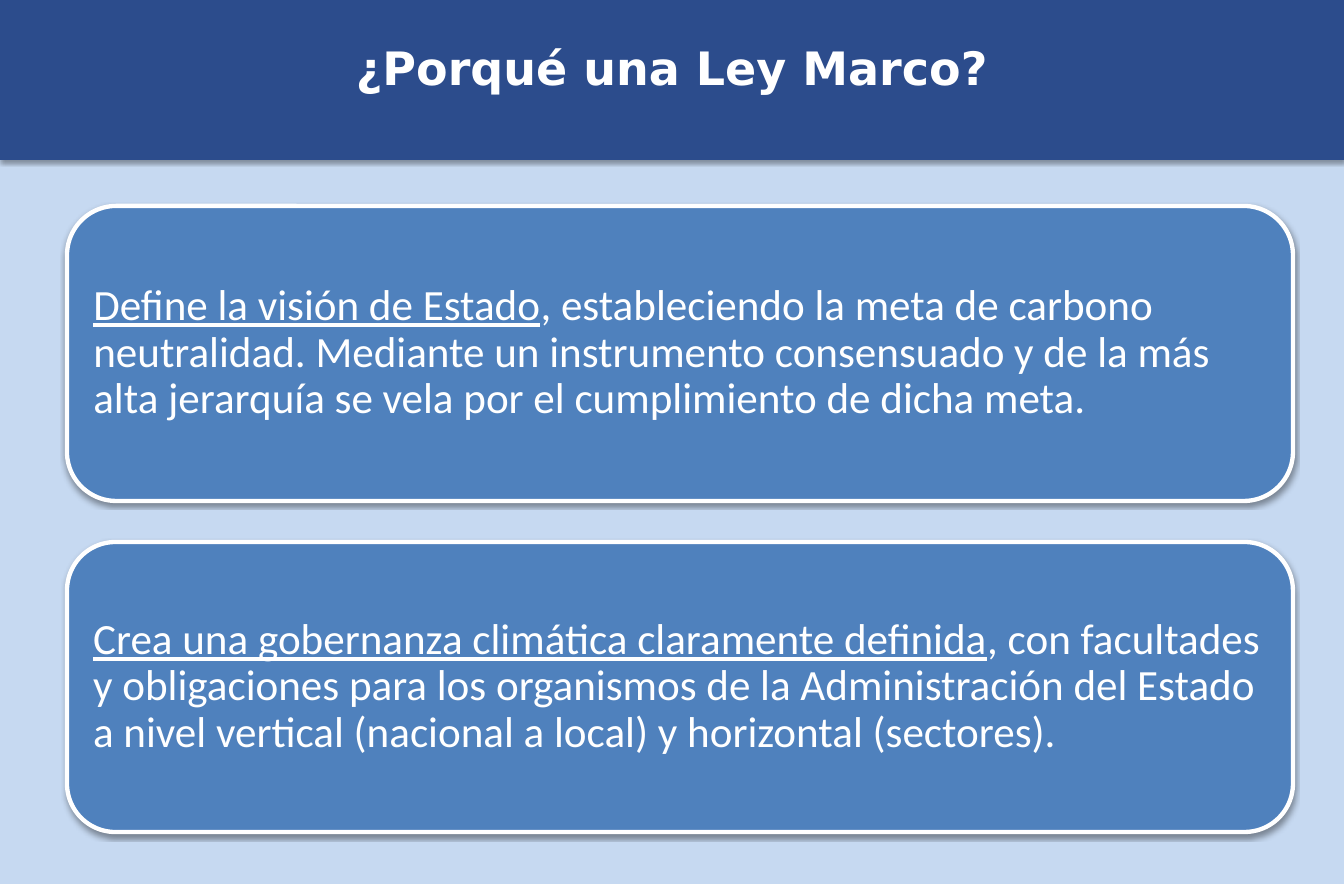
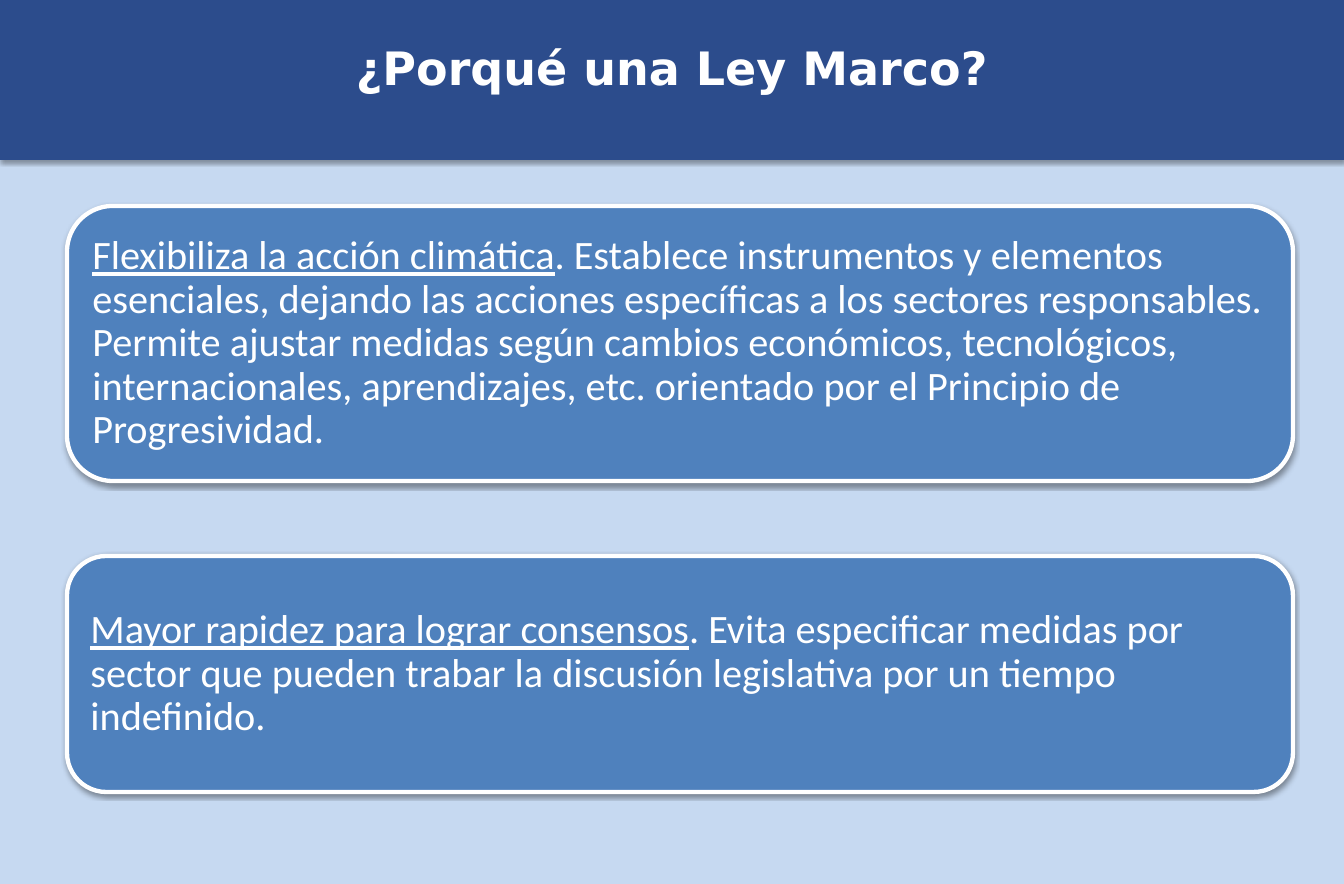
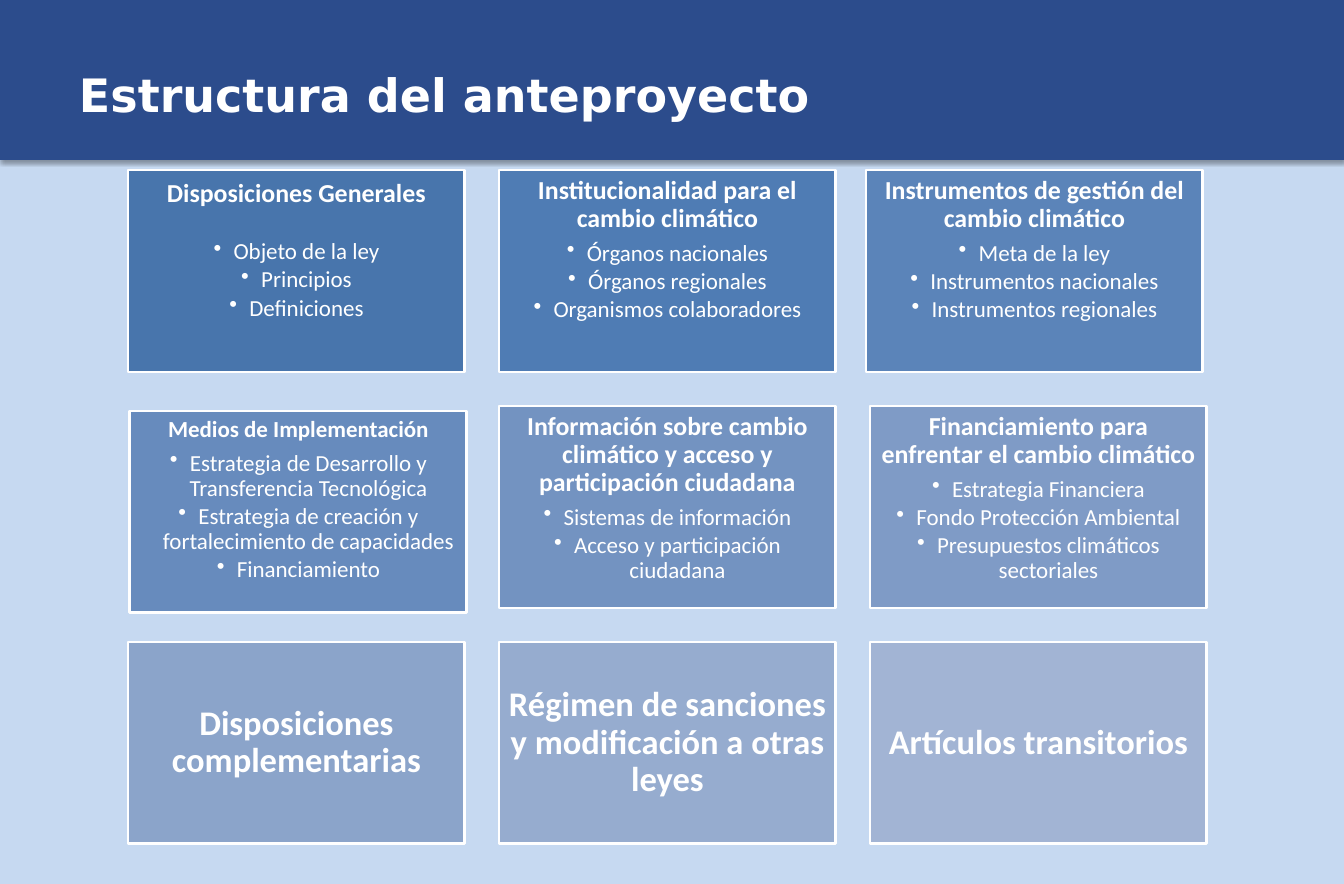
from dataclasses import dataclass

from lxml.etree import SubElement
from pptx import Presentation
from pptx.dml.color import RGBColor as RGB
from pptx.enum.shapes import MSO_SHAPE as SHAPE
from pptx.enum.text import MSO_ANCHOR as ANCHOR, PP_ALIGN as ALIGN
from pptx.oxml.ns import qn
from pptx.util import Pt

PX = 914400 / 103.5  # EMU per pixel


@dataclass(frozen=True)
class Theme:
    background: str = "C6D9F1"
    band: str = "2C4C8C"
    card: str = "4F81BD"
    white: str = "FFFFFF"
    tiles: tuple = ("4875AC", "4F7CB4", "5B84B9",
                    "678BBD", "7393C1", "7F9BC6",
                    "8BA4CA", "96ACCF", "A2B4D4")
    title_font: str = "DejaVu Sans"
    body_font: str = "Calibri"
    title_size: int = 32
    card_sizes: tuple = (30, 28)
    tile_size: int = 18
    tile_small: int = 16
    tile_large: int = 24


T = Theme()


def px(*lengths):
    return [round(n * PX) for n in lengths]


def add_text(tf, text, *, size, lead="", font=T.body_font, bold=False, align=ALIGN.LEFT,
             spacing=0.9, after=0, bullet=False):
    """Add a paragraph; lead is underlined text that opens it, after is in points."""
    p = tf.paragraphs[0]
    if p.runs:
        p = tf.add_paragraph()
    if bullet:
        p.level = 1
        indent, = px(20)
        pPr = p._p.get_or_add_pPr()
        pPr.set("marL", str(indent))
        pPr.set("indent", str(-indent))
        SubElement(pPr, qn("a:buChar"), char="•")
    p.alignment = align
    p.line_spacing = spacing
    p.space_after = Pt(after)
    for words, underline in ((lead, True), (text, False)):
        if words:
            r = p.add_run()
            r.text = words
            r.font.name, r.font.size, r.font.bold = font, Pt(size), bold
            r.font.underline = underline
            r.font.color.rgb = RGB.from_string(T.white)


def add_box(s, kind, at, fill, *, line=0, shadow=0, inset=0, anchor=ANCHOR.TOP):
    """Add a filled shape and return its text frame; shadow is its opacity in percent."""
    sp = s.shapes.add_shape(kind, *px(*at))
    sp.fill.solid()
    sp.fill.fore_color.rgb = RGB.from_string(fill)
    if line:
        sp.line.color.rgb = RGB.from_string(T.white)
        sp.line.width = Pt(line)
    else:
        sp.line.fill.background()
    sp.shadow.inherit = False
    if shadow:
        effects = sp._element.spPr.find(qn("a:effectLst"))
        outer = SubElement(effects, qn("a:outerShdw"), blurRad=str(Pt(3.1)), dist=str(Pt(1.7)),
                           dir="5400000", rotWithShape="0")
        color = SubElement(outer, qn("a:srgbClr"), val="000000")
        SubElement(color, qn("a:alpha"), val=str(shadow * 1000))
    tf = sp.text_frame
    tf.word_wrap = True
    tf.vertical_anchor = anchor
    tf.margin_left = tf.margin_right = tf.margin_top = tf.margin_bottom = px(inset)[0]
    return tf


prs = Presentation()
prs.slide_width, prs.slide_height = px(1344, 884)
master_fill = prs.slide_master.background.fill
master_fill.solid()
master_fill.fore_color.rgb = RGB.from_string(T.background)

# Title band on every slide
titles = [
    ("¿Porqué una Ley Marco?", 34, ALIGN.CENTER),
    ("¿Porqué una Ley Marco?", 34, ALIGN.CENTER),
    ("Estructura del anteproyecto", 61, ALIGN.LEFT),
]
slides = []
for title, top, align in titles:
    s = prs.slides.add_slide(prs.slide_layouts[6])
    add_box(s, SHAPE.RECTANGLE, (0, 0, 1344, 160), T.band, shadow=35)
    tf = s.shapes.add_textbox(*px(67, top, 1210, 147)).text_frame
    tf.word_wrap = True
    tf.margin_left, tf.margin_right, tf.margin_top, tf.margin_bottom = px(12, 12, 6, 6)
    add_text(tf, title, size=T.title_size, font=T.title_font, bold=True, align=align, spacing=1.0)
    slides.append(s)

# Slides 1 and 2: reasons, as (top, height, underlined lead, rest)
reasons = [
    [(206, 295, "Define la visión de Estado",
      ", estableciendo la meta de carbono neutralidad. Mediante un instrumento consensuado "
      "y de la más alta jerarquía se vela por el cumplimiento de dicha meta."),
     (542, 290, "Crea una gobernanza climática claramente definida",
      ", con facultades y obligaciones para los organismos de la Administración del Estado "
      "a nivel vertical (nacional a local) y horizontal (sectores).")],
    [(206, 275, "Flexibiliza la acción climática",
      ". Establece instrumentos y elementos esenciales, dejando las acciones específicas a los "
      "sectores responsables. Permite ajustar medidas según cambios económicos, tecnológicos, "
      "internacionales, aprendizajes, etc. orientado por el Principio de Progresividad."),
     (556, 236, "Mayor rapidez para lograr consensos",
      ". Evita especificar medidas por sector que pueden trabar la discusión legislativa "
      "por un tiempo indefinido.")],
]
for s, cards, size in zip(slides, reasons, T.card_sizes):
    for top, height, lead, rest in cards:
        tf = add_box(s, SHAPE.ROUNDED_RECTANGLE, (67, top, 1226, height), T.card,
                     line=3, shadow=38, inset=12, anchor=ANCHOR.MIDDLE)
        add_text(tf, rest, lead=lead, size=size)

# Slide 3: three by three grid of the bill's chapters
chapters = [
    ("Disposiciones Generales", ["Objeto de la ley", "Principios", "Definiciones"]),
    ("Institucionalidad para el cambio climático",
     ["Órganos nacionales", "Órganos regionales", "Organismos colaboradores"]),
    ("Instrumentos de gestión del cambio climático",
     ["Meta de la ley", "Instrumentos nacionales", "Instrumentos regionales"]),
    ("Medios de Implementación",
     ["Estrategia de Desarrollo y Transferencia Tecnológica",
      "Estrategia de creación y fortalecimiento de capacidades", "Financiamiento"]),
    ("Información sobre cambio climático y acceso y participación ciudadana",
     ["Sistemas de información", "Acceso y participación ciudadana"]),
    ("Financiamiento para enfrentar el cambio climático",
     ["Estrategia Financiera", "Fondo Protección Ambiental",
      "Presupuestos climáticos sectoriales"]),
    ("Disposiciones complementarias", []),
    ("Régimen de sanciones y modificación a otras leyes", []),
    ("Artículos transitorios", []),
]
nudges = {2: (-4, 0), 3: (2, 5)}  # tiles set slightly off the grid
heading_formats = {0: dict(spacing=1.0, after=22), 3: dict(size=T.tile_small)}
for i, (heading, topics) in enumerate(chapters):
    row, col = divmod(i, 3)
    dx, dy = nudges.get(i, (0, 0))
    tf = add_box(slides[2], SHAPE.RECTANGLE,
                 (128 + 371 * col + dx, 170 + 236 * row + dy, 337, 202), T.tiles[i], line=2,
                 inset=7 if topics else 10, anchor=ANCHOR.TOP if topics else ANCHOR.MIDDLE)
    style = dict(size=T.tile_size if topics else T.tile_large, after=6 if topics else 0)
    style.update(heading_formats.get(i, {}))
    add_text(tf, heading, bold=True, align=ALIGN.CENTER, **style)
    for topic in topics:
        add_text(tf, topic, size=T.tile_small, align=ALIGN.CENTER, after=2.4, bullet=True)

prs.save("out.pptx")
